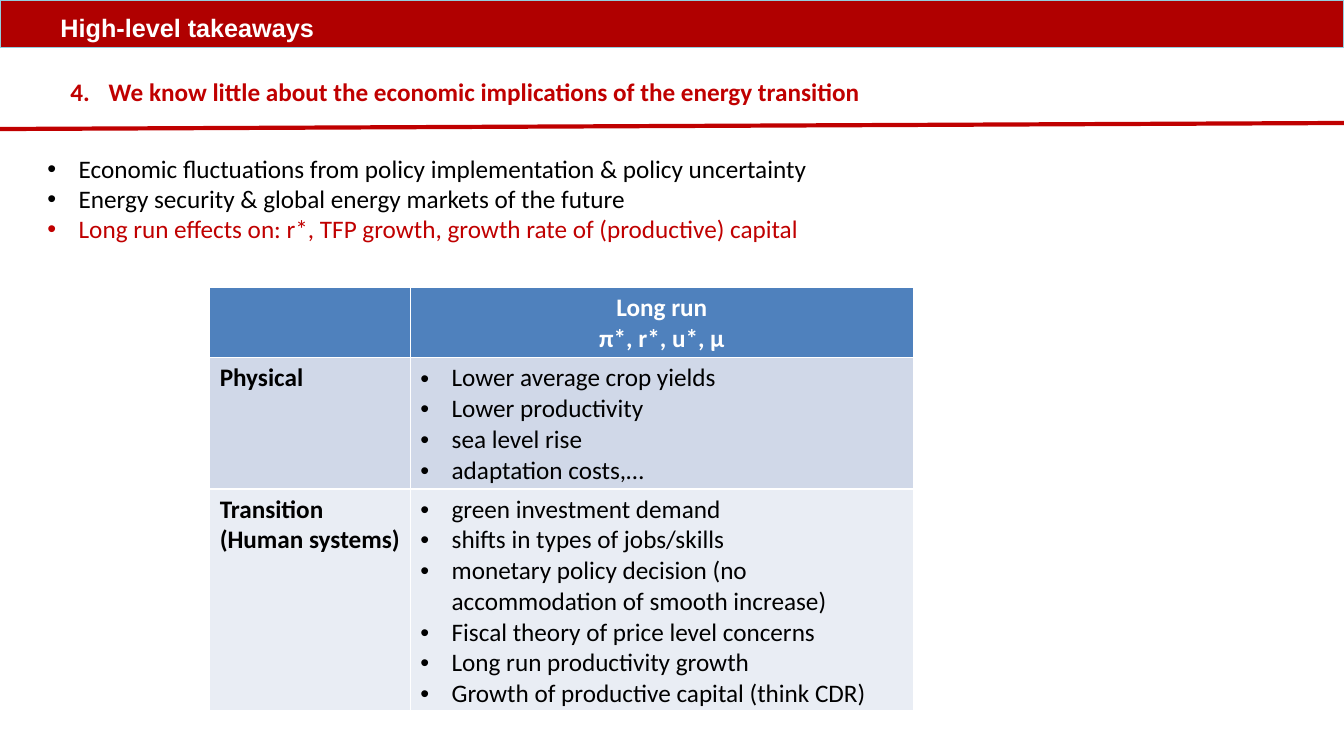
from lxml import etree
from pptx import Presentation, util as u
from pptx.dml.color import RGBColor
from pptx.enum import shapes, text
from pptx.oxml import ns

WIDTH, HEIGHT = u.Inches(13.33), u.Inches(7.5)
BAR_RED = RGBColor(0xB0, 0x00, 0x00)
RED = RGBColor(0xC0, 0x00, 0x00)
BAR_EDGE = RGBColor(0x93, 0xCD, 0xDD)
HEADER_BLUE = RGBColor(0x4F, 0x81, 0xBD)
PHYSICAL_BLUE = RGBColor(0xD0, 0xD8, 0xE8)
TRANSITION_BLUE = RGBColor(0xE9, 0xED, 0xF4)
WHITE = RGBColor(0xFF, 0xFF, 0xFF)
BLACK = RGBColor(0x00, 0x00, 0x00)

OPEN_QUESTIONS = [
    "Economic fluctuations from policy implementation & policy uncertainty",
    "Energy security & global energy markets of the future",
    "Long run effects on: r*, TFP growth, growth rate of (productive) capital",
]
EFFECTS = [
    ("Physical", PHYSICAL_BLUE, [
        "Lower average crop yields",
        "Lower productivity",
        "sea level rise",
        "adaptation costs,…",
    ]),
    ("Transition\n(Human systems)", TRANSITION_BLUE, [
        "green investment demand",
        "shifts in types of jobs/skills",
        "monetary policy decision (no accommodation of smooth increase)",
        "Fiscal theory of price level concerns",
        "Long run productivity growth",
        "Growth of productive capital (think CDR)",
    ]),
]


def across(percent):
    """Return a share of the slide's width."""
    return u.Emu(round(WIDTH * percent / 100))


def down(percent):
    """Return a share of the slide's height."""
    return u.Emu(round(HEIGHT * percent / 100))


def place(part, left, top, width, height):
    """Move a part to a box given in percent of the slide."""
    part.left, part.top = across(left), down(top)
    part.width, part.height = across(width), down(height)


def style(paragraph, color=BLACK, bold=False, font="Calibri", align=text.PP_ALIGN.LEFT):
    """Format a paragraph and its runs."""
    paragraph.alignment = align
    paragraph.space_before = u.Pt(0)
    for run in paragraph.runs:
        run.font.size = u.Pt(18)
        run.font.name = font
        run.font.bold = bold
        run.font.color.rgb = color


def mark(paragraph, indent=0.31, start=None):
    """Give a paragraph a bullet, or a number when a start is given."""
    properties = paragraph._p.get_or_add_pPr()
    properties.set("marL", str(u.Inches(indent)))
    properties.set("indent", str(-u.Inches(indent)))
    if start:
        etree.SubElement(properties, ns.qn("a:buAutoNum"), type="arabicPeriod", startAt=str(start))
    else:
        etree.SubElement(properties, ns.qn("a:buFont"), typeface="Arial")
        etree.SubElement(properties, ns.qn("a:buChar"), char="•")


def add_title_bar(slide):
    """Turn the title placeholder into the red bar."""
    bar = slide.shapes.title
    place(bar, 0, 0, 100, 6.27)
    bar.fill.solid()
    bar.fill.fore_color.rgb = BAR_RED
    bar.line.color.rgb = BAR_EDGE
    bar.line.width = u.Pt(0)
    frame = bar.text_frame
    frame.text = "High-level takeaways"
    frame.auto_size = text.MSO_AUTO_SIZE.NONE
    frame.vertical_anchor = text.MSO_ANCHOR.BOTTOM
    frame.margin_left = across(4.5)
    style(frame.paragraphs[0], WHITE, True, "Arial")


def add_takeaway(slide):
    """Add the numbered takeaway under the title."""
    takeaway = slide.shapes.add_textbox(across(4.5), down(9.47), across(82.07), down(5.33))
    frame = takeaway.text_frame
    frame.word_wrap = True
    frame.text = "We know little about the economic implications of the energy transition"
    style(frame.paragraphs[0], RED, True)
    mark(frame.paragraphs[0], 0.38, start=4)


def add_divider(slide):
    """Draw the slightly rising red line."""
    divider = slide.shapes.add_connector(
        shapes.MSO_CONNECTOR.STRAIGHT, 0, down(17.07), WIDTH, down(16.27))
    divider.line.color.rgb = RED
    divider.line.width = u.Pt(3)
    etree.SubElement(divider._element.spPr, ns.qn("a:effectLst"))


def add_questions(slide):
    """Fill the body placeholder with the open questions."""
    questions = slide.placeholders[1]
    place(questions, 2.78, 19.6, 88.97, 13.47)
    frame = questions.text_frame
    frame.text = "\n".join(OPEN_QUESTIONS)
    frame.auto_size = text.MSO_AUTO_SIZE.NONE
    for paragraph in frame.paragraphs:
        style(paragraph, RED if paragraph.text == OPEN_QUESTIONS[-1] else BLACK)
        mark(paragraph)


def fill_cell(cell, words, fill, bulleted=False, **look):
    """Write, colour and format one table cell."""
    cell.fill.solid()
    cell.fill.fore_color.rgb = fill
    cell.text_frame.text = words
    for paragraph in cell.text_frame.paragraphs:
        style(paragraph, **look)
        if bulleted:
            mark(paragraph)


def add_effects_table(slide):
    """Add the table of long run effects."""
    columns, rows = [14.93, 37.43], [9.07, 17.33, 29.33]
    effects = slide.shapes.add_table(
        len(rows), len(columns), across(15.6), down(38),
        across(sum(columns)), down(sum(rows))).table
    for column, share in zip(effects.columns, columns):
        column.width = across(share)
    for row, share in zip(effects.rows, rows):
        row.height = down(share)
    fill_cell(effects.cell(0, 0), "", HEADER_BLUE)
    fill_cell(effects.cell(0, 1), "Long run\nπ*, r*, u*, μ", HEADER_BLUE,
              color=WHITE, bold=True, align=text.PP_ALIGN.CENTER)
    for number, (system, fill, outcomes) in enumerate(EFFECTS, 1):
        fill_cell(effects.cell(number, 0), system, fill, bold=True)
        fill_cell(effects.cell(number, 1), "\n".join(outcomes), fill, bulleted=True)


def main():
    """Build and save the slide."""
    deck = Presentation()
    deck.slide_width, deck.slide_height = WIDTH, HEIGHT
    slide = deck.slides.add_slide(deck.slide_layouts[1])
    add_title_bar(slide)
    add_takeaway(slide)
    add_divider(slide)
    add_questions(slide)
    add_effects_table(slide)
    deck.save("out.pptx")


if __name__ == "__main__":
    main()
